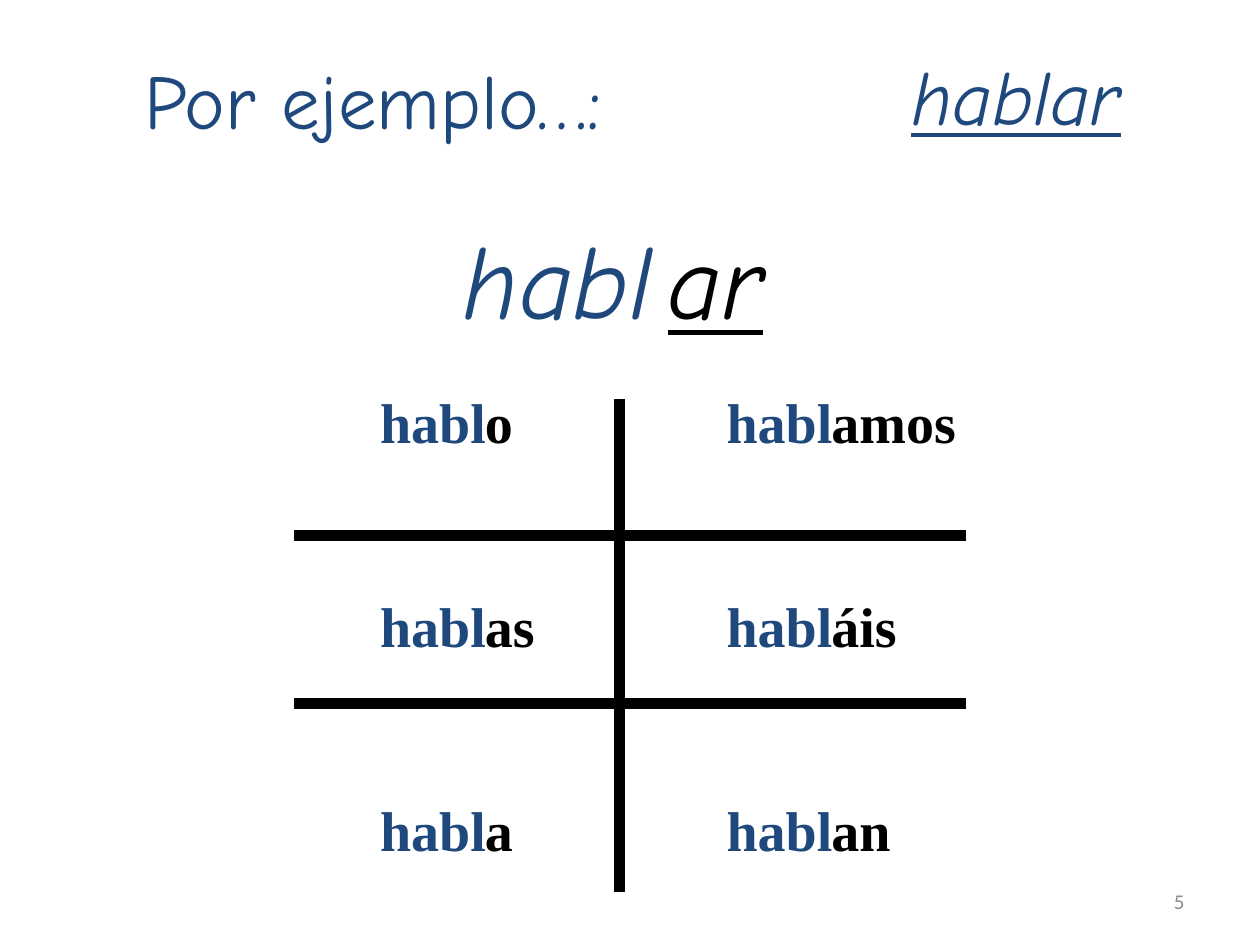
"""Build a slide that conjugates the Spanish verb hablar in the present tense."""
from dataclasses import dataclass

from lxml import etree
from pptx import Presentation
from pptx.dml.color import RGBColor
from pptx.enum.shapes import MSO_CONNECTOR
from pptx.enum.text import MSO_ANCHOR, PP_ALIGN
from pptx.oxml.ns import qn
from pptx.slide import Slide
from pptx.util import Pt

LEFT, CENTER, RIGHT = PP_ALIGN.LEFT, PP_ALIGN.CENTER, PP_ALIGN.RIGHT
TOP, MIDDLE = MSO_ANCHOR.TOP, MSO_ANCHOR.MIDDLE
STRAIGHT = MSO_CONNECTOR.STRAIGHT


@dataclass(frozen=True)
class Theme:
    blue: str = "1F497D"
    black: str = "000000"
    grey: str = "8C8C8C"
    display_font: str = "Comic Neue"
    verb_font: str = "Times New Roman"
    number_font: str = "Calibri"
    title_size: float = 44
    infinitive_size: float = 60
    verb_size: float = 32
    number_size: float = 12
    rule_width: float = 6
    row_gap: float = 78


THEME = Theme()


@dataclass(frozen=True)
class Style:
    font: str
    size: float
    color: str
    bold: bool = False
    italic: bool = False
    underline: bool = False


@dataclass(frozen=True)
class Label:
    lines: tuple[str, ...]
    left: float
    top: float
    width: float
    height: float
    style: Style
    align: PP_ALIGN = LEFT
    anchor: MSO_ANCHOR = TOP
    gap: float = 0


@dataclass(frozen=True)
class Rule:
    x1: float
    y1: float
    x2: float
    y2: float


@dataclass(frozen=True)
class VerbColumn:
    stem_left: float
    ending_left: float
    ending_width: float
    endings: tuple[str, ...]


STEM = "habl"
COLUMN_TOP, COLUMN_HEIGHT, STEM_WIDTH = 218, 276, 75

TITLE = Style(THEME.display_font, THEME.title_size, THEME.blue)
VERB = Style(THEME.display_font, THEME.title_size, THEME.blue, italic=True, underline=True)
BIG_STEM = Style(THEME.display_font, THEME.infinitive_size, THEME.blue, italic=True)
BIG_ENDING = Style(THEME.display_font, THEME.infinitive_size, THEME.black, italic=True, underline=True)
ROW_STEM = Style(THEME.verb_font, THEME.verb_size, THEME.blue, bold=True)
ROW_ENDING = Style(THEME.verb_font, THEME.verb_size, THEME.black, bold=True)
NUMBER = Style(THEME.number_font, THEME.number_size, THEME.grey)

LABELS = (
    Label(("5",), 516, 500.5, 168, 28.75, NUMBER, RIGHT, MIDDLE),
    Label(("Por ejemplo…:",), 75.5, 26.5, 296.5, 60, TITLE),
    Label(("hablar",), 503.5, 24, 144, 60, VERB, RIGHT),
    Label((STEM,), 252.5, 119, 132, 79, BIG_STEM, CENTER),
    Label(("ar",), 372, 119, 74, 79, BIG_ENDING, CENTER),
)
RULES = (
    Rule(354, 228, 354, 510),
    Rule(168, 306, 552, 306),
    Rule(168, 402, 552, 402),
)
COLUMNS = (
    VerbColumn(210, 270, 43, ("o", "as", "a")),
    VerbColumn(408, 468, 86, ("amos", "áis", "an")),
)


def add_label(page: Slide, label: Label) -> None:
    box = page.shapes.add_textbox(Pt(label.left), Pt(label.top), Pt(label.width), Pt(label.height))
    frame = box.text_frame
    frame.word_wrap = False
    frame.vertical_anchor = label.anchor
    for index, line in enumerate(label.lines):
        para = frame.add_paragraph() if index else frame.paragraphs[0]
        para.alignment = label.align
        para.space_before = Pt(label.gap if index else 0)
        span = para.add_run()
        span.text = line
        font = span.font
        font.name = label.style.font
        font.size = Pt(label.style.size)
        font.bold = label.style.bold
        font.italic = label.style.italic
        font.underline = label.style.underline
        font.color.rgb = RGBColor.from_string(label.style.color)


def add_rule(page: Slide, rule: Rule) -> None:
    connector = page.shapes.add_connector(STRAIGHT, Pt(rule.x1), Pt(rule.y1), Pt(rule.x2), Pt(rule.y2))
    connector.line.width = Pt(THEME.rule_width)
    connector.line.color.rgb = RGBColor.from_string(THEME.black)
    etree.SubElement(connector._element.spPr, qn("a:effectLst"))


def add_verb_column(page: Slide, column: VerbColumn) -> None:
    stems = (STEM,) * len(column.endings)
    add_label(page, Label(stems, column.stem_left, COLUMN_TOP, STEM_WIDTH, COLUMN_HEIGHT,
                          ROW_STEM, CENTER, gap=THEME.row_gap))
    add_label(page, Label(column.endings, column.ending_left, COLUMN_TOP, column.ending_width,
                          COLUMN_HEIGHT, ROW_ENDING, gap=THEME.row_gap))


def main() -> None:
    deck = Presentation()
    deck.slide_width, deck.slide_height = Pt(720), Pt(540)
    page = deck.slides.add_slide(deck.slide_layouts[6])
    for label in LABELS:
        add_label(page, label)
    for rule in RULES:
        add_rule(page, rule)
    for column in COLUMNS:
        add_verb_column(page, column)
    deck.save("out.pptx")


if __name__ == "__main__":
    main()
